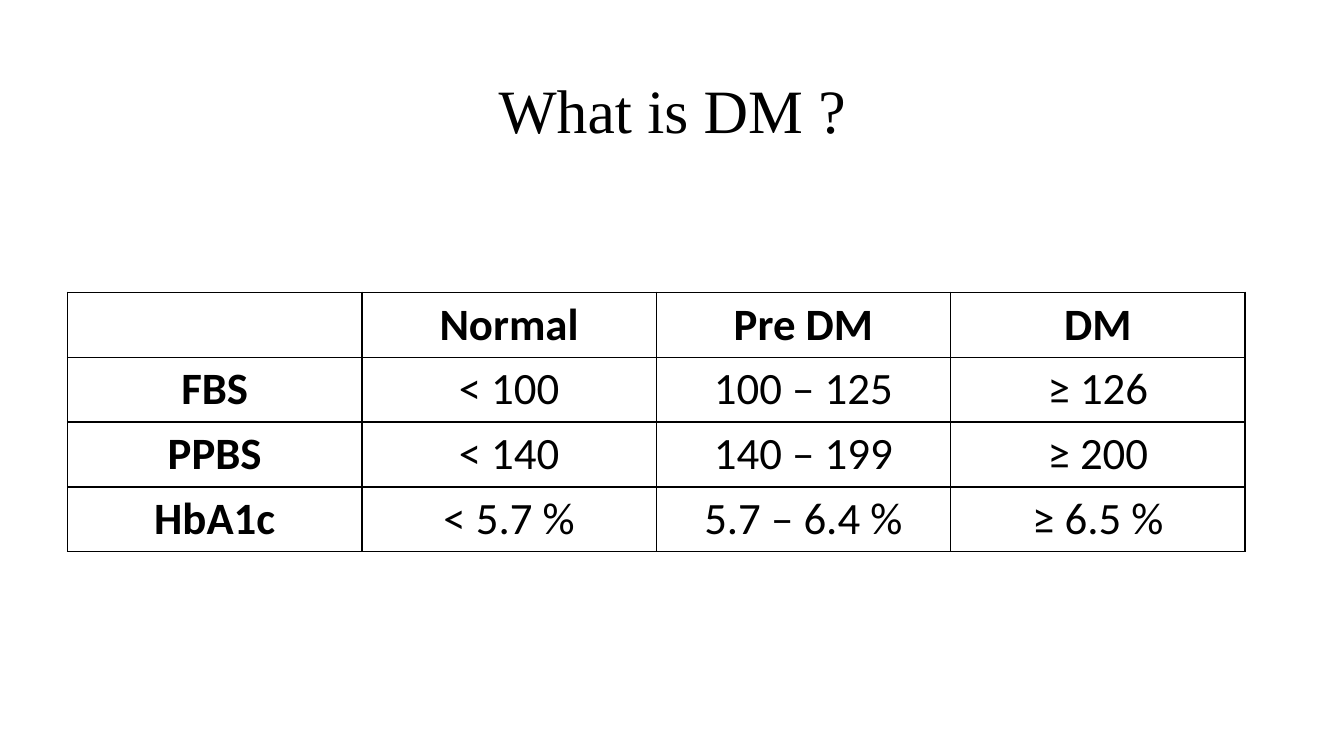
from dataclasses import dataclass

from lxml.etree import SubElement
from pptx import Presentation
from pptx.dml.color import RGBColor
from pptx.enum.text import MSO_ANCHOR, PP_ALIGN
from pptx.oxml.ns import qn
from pptx.slide import Slide
from pptx.table import _Cell
from pptx.text.text import _Paragraph
from pptx.util import Inches, Pt

COLORS = {"ink": "000000", "paper": "FFFFFF"}
COLUMN_WIDTH = 2.92
ROW_HEIGHT = 0.64


@dataclass(frozen=True)
class Criterion:
    test: str
    normal: str
    pre_dm: str
    dm: str

    def entries(self) -> tuple[str, ...]:
        return self.test, self.normal, self.pre_dm, self.dm


CRITERIA = [
    Criterion("", "Normal", "Pre DM", "DM"),
    Criterion("FBS", "< 100", "100 – 125", "≥ 126"),
    Criterion("PPBS", "< 140", "140 – 199", "≥ 200"),
    Criterion("HbA1c", "< 5.7 %", "5.7 – 6.4 %", "≥ 6.5 %"),
]


def format_paragraph(paragraph: _Paragraph, family: str, size: int, bold: bool) -> None:
    paragraph.alignment = PP_ALIGN.CENTER
    paragraph.font.name = family
    paragraph.font.size = Pt(size)
    paragraph.font.bold = bold
    paragraph.font.color.rgb = RGBColor.from_string(COLORS["ink"])


def add_borders(cell: _Cell) -> None:
    properties = cell._tc.get_or_add_tcPr()
    for side in ("lnL", "lnR", "lnT", "lnB"):
        border = SubElement(properties, qn(f"a:{side}"), w=str(Pt(1)))
        SubElement(SubElement(border, qn("a:solidFill")), qn("a:srgbClr"), val=COLORS["ink"])


def fill_cell(cell: _Cell, entry: str, bold: bool) -> None:
    cell.margin_left = cell.margin_right = Inches(0.13)
    cell.margin_top = cell.margin_bottom = Inches(0.05)
    add_borders(cell)
    cell.fill.solid()
    cell.fill.fore_color.rgb = RGBColor.from_string(COLORS["paper"])
    if entry:
        cell.text = entry
        format_paragraph(cell.text_frame.paragraphs[0], "Calibri", 32, bold)


def add_heading(slide: Slide, heading: str) -> None:
    title = slide.shapes.title
    title.left, title.top = Inches(0.92), Inches(0.4)
    title.width, title.height = Inches(11.5), Inches(1.45)
    title.text_frame.text = heading
    title.text_frame.vertical_anchor = MSO_ANCHOR.MIDDLE
    paragraph = title.text_frame.paragraphs[0]
    paragraph.line_spacing = 0.9
    format_paragraph(paragraph, "Times New Roman", 44, False)


def add_criteria(slide: Slide, criteria: list[Criterion]) -> None:
    column_count = len(criteria[0].entries())
    thresholds = slide.shapes.add_table(
        len(criteria), column_count, Inches(0.67), Inches(2.9),
        Inches(COLUMN_WIDTH * column_count), Inches(ROW_HEIGHT * len(criteria)),
    ).table
    thresholds.first_row = thresholds.horz_banding = False
    for row, criterion in enumerate(criteria):
        for column, entry in enumerate(criterion.entries()):
            fill_cell(thresholds.cell(row, column), entry, row == 0 or column == 0)


def main() -> None:
    presentation = Presentation()
    presentation.slide_width, presentation.slide_height = Inches(13.33), Inches(7.5)
    slide = presentation.slides.add_slide(presentation.slide_layouts.get_by_name("Title Only"))
    add_heading(slide, "What is DM ?")
    add_criteria(slide, CRITERIA)
    presentation.save("out.pptx")


if __name__ == "__main__":
    main()
